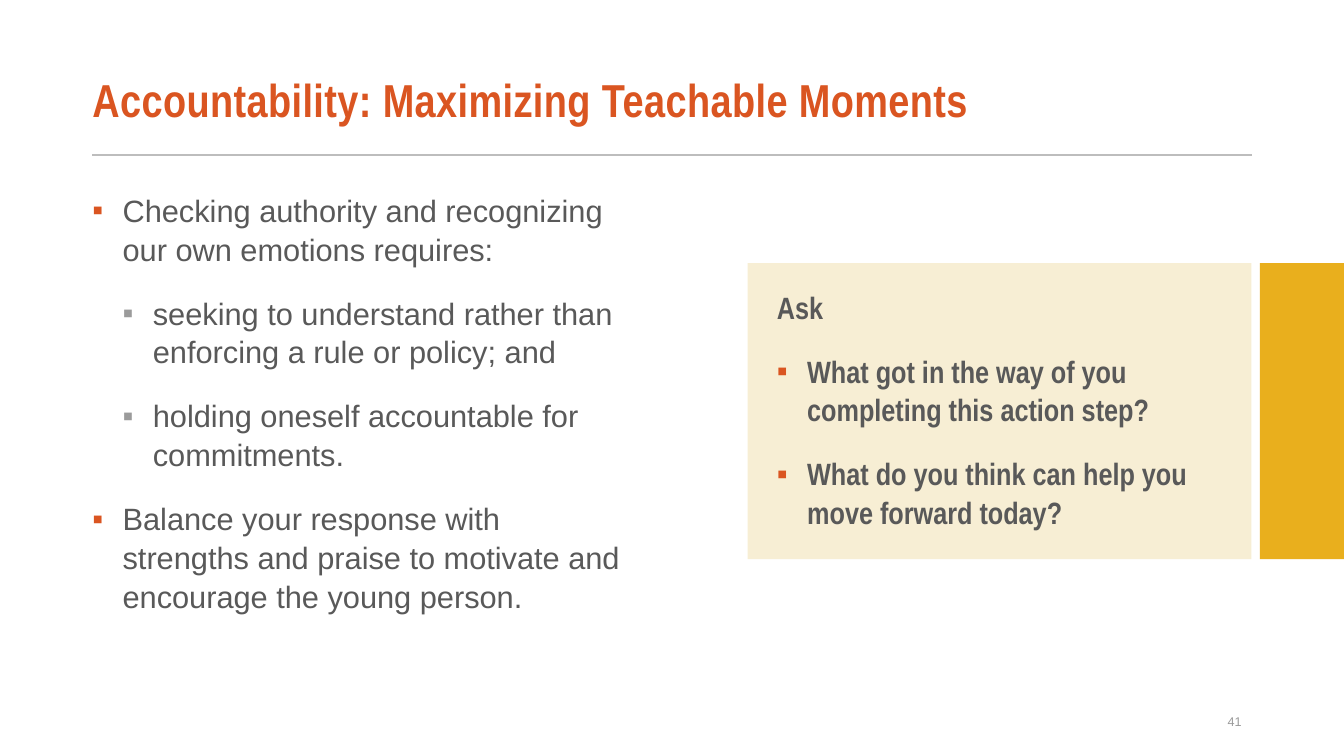
from dataclasses import dataclass

from lxml import etree
from pptx import Presentation
from pptx.dml.color import RGBColor
from pptx.enum.shapes import MSO_CONNECTOR, MSO_SHAPE
from pptx.enum.text import MSO_ANCHOR, MSO_AUTO_SIZE, PP_ALIGN
from pptx.oxml.ns import qn
from pptx.util import Pt

LEFT, RIGHT = PP_ALIGN.LEFT, PP_ALIGN.RIGHT
TOP, MIDDLE = MSO_ANCHOR.TOP, MSO_ANCHOR.MIDDLE
NO_FIT = MSO_AUTO_SIZE.NONE
RECTANGLE = MSO_SHAPE.RECTANGLE
STRAIGHT = MSO_CONNECTOR.STRAIGHT
TWO_CONTENT = 3


@dataclass(frozen=True)
class Theme:
    accent: str = "DA5521"
    text: str = "595959"
    muted: str = "9B9B9B"
    rule: str = "BDBDBD"
    panel: str = "F7EED4"
    tab: str = "E9AF1D"
    font: str = "Arial"
    heading_font: str = "Arial Narrow"
    title_size: int = 33
    body_size: int = 22
    number_size: int = 9
    indent: float = 21.6
    paragraph_gap: int = 18
    line_spacing: float = 1.05


def write(paragraph, text, *, font, size, color, bold=False, tracking=0,
          align=LEFT, line_spacing=1.0, before=0):
    paragraph.alignment = align
    paragraph.line_spacing = line_spacing
    paragraph.space_before = Pt(before)
    paragraph.space_after = Pt(0)
    run = paragraph.add_run()
    run.text = text
    run.font.name = font
    run.font.size = Pt(size)
    run.font.bold = bold
    run.font.color.rgb = RGBColor.from_string(color)
    if tracking:
        run._r.get_or_add_rPr().set("spc", str(round(tracking * 100)))


class SlideBuilder:
    def __init__(self, slide, theme):
        self.slide = slide
        self.theme = theme

    def place(self, shape, left, top, width, height, anchor=TOP, left_inset=0.0):
        shape.left, shape.top = Pt(left), Pt(top)
        shape.width, shape.height = Pt(width), Pt(height)
        frame = shape.text_frame
        frame.auto_size = NO_FIT
        frame.word_wrap = True
        frame.vertical_anchor = anchor
        frame.margin_left, frame.margin_right = Pt(left_inset), Pt(7.2)
        frame.margin_top = frame.margin_bottom = Pt(3.6)
        return frame

    def title(self, text, *box):
        frame = self.place(self.slide.shapes.title, *box, anchor=MIDDLE)
        write(frame.paragraphs[0], text, font=self.theme.heading_font,
              size=self.theme.title_size, color=self.theme.accent, bold=True,
              tracking=0.3, line_spacing=0.87)

    def bullet(self, paragraph, level):
        properties = paragraph._p.get_or_add_pPr()
        if level is None:
            properties.set("marL", "0")
            properties.set("indent", "0")
            etree.SubElement(properties, qn("a:buNone"))
            return
        paragraph.level = level
        properties.set("marL", str(Pt(self.theme.indent * (level + 1))))
        properties.set("indent", str(-Pt(self.theme.indent)))
        color = etree.SubElement(properties, qn("a:buClr"))
        etree.SubElement(color, qn("a:srgbClr"),
                         val=self.theme.muted if level else self.theme.accent)
        etree.SubElement(properties, qn("a:buFont"), typeface=self.theme.font)
        etree.SubElement(properties, qn("a:buChar"), char="▪")

    def body(self, index, items, *box, font, bold=False):
        placeholder = self.slide.placeholders[index]
        frame = self.place(placeholder, *box)
        for position, (level, text) in enumerate(items):
            paragraph = frame.add_paragraph() if position else frame.paragraphs[0]
            self.bullet(paragraph, level)
            write(paragraph, text, font=font, size=self.theme.body_size,
                  color=self.theme.text, bold=bold,
                  line_spacing=self.theme.line_spacing,
                  before=self.theme.paragraph_gap if position else 0)
        return placeholder

    def block(self, color, left, top, width, height):
        block = self.slide.shapes.add_shape(
            RECTANGLE, Pt(left), Pt(top), Pt(width), Pt(height))
        block.shadow.inherit = False
        block.fill.solid()
        block.fill.fore_color.rgb = RGBColor.from_string(color)
        block.line.fill.background()
        return block

    def rule(self, left, right, y):
        rule = self.slide.shapes.add_connector(
            STRAIGHT, Pt(left), Pt(y), Pt(right), Pt(y))
        rule.line.color.rgb = RGBColor.from_string(self.theme.rule)
        rule.line.width = Pt(1.5)
        etree.SubElement(rule._element.spPr, qn("a:effectLst"))

    def page_number(self, text, *box):
        number = self.slide.shapes.add_textbox(*map(Pt, box))
        frame = self.place(number, *box, anchor=MIDDLE, left_inset=7.2)
        write(frame.paragraphs[0], text, font=self.theme.font,
              size=self.theme.number_size, color=self.theme.muted, align=RIGHT)


def main():
    presentation = Presentation()
    presentation.slide_width, presentation.slide_height = Pt(960), Pt(540)
    theme = Theme()
    slide = presentation.slides.add_slide(presentation.slide_layouts[TWO_CONTENT])
    builder = SlideBuilder(slide, theme)

    left, right = 66, 894
    panel_left, panel_top, panel_height = 534, 188, 211.5

    builder.rule(left, right, 111)
    builder.title("Accountability: Maximizing Teachable Moments",
                  left, 39, right - left, 68.5)
    builder.body(1, [
        (0, "Checking authority and recognizing our own emotions requires:"),
        (1, "seeking to understand rather than enforcing a rule or policy; and"),
        (1, "holding oneself accountable for commitments."),
        (0, "Balance your response with strengths and praise to motivate and "
            "encourage the young person."),
    ], left, 132, 389.5, 365, font=theme.font)
    questions = builder.body(2, [
        (None, "Ask"),
        (0, "What got in the way of you completing this action step?"),
        (0, "What do you think can help you move forward today?"),
    ], 555, 201, 318, 186, font=theme.heading_font, bold=True)
    panel = builder.block(theme.panel, panel_left, panel_top,
                          right - panel_left, panel_height)
    questions.element.addprevious(panel.element)
    builder.block(theme.tab, 900, panel_top, 60, panel_height)
    builder.page_number("41", 678, 500.5, 216, 29)

    presentation.save("out.pptx")


if __name__ == "__main__":
    main()
